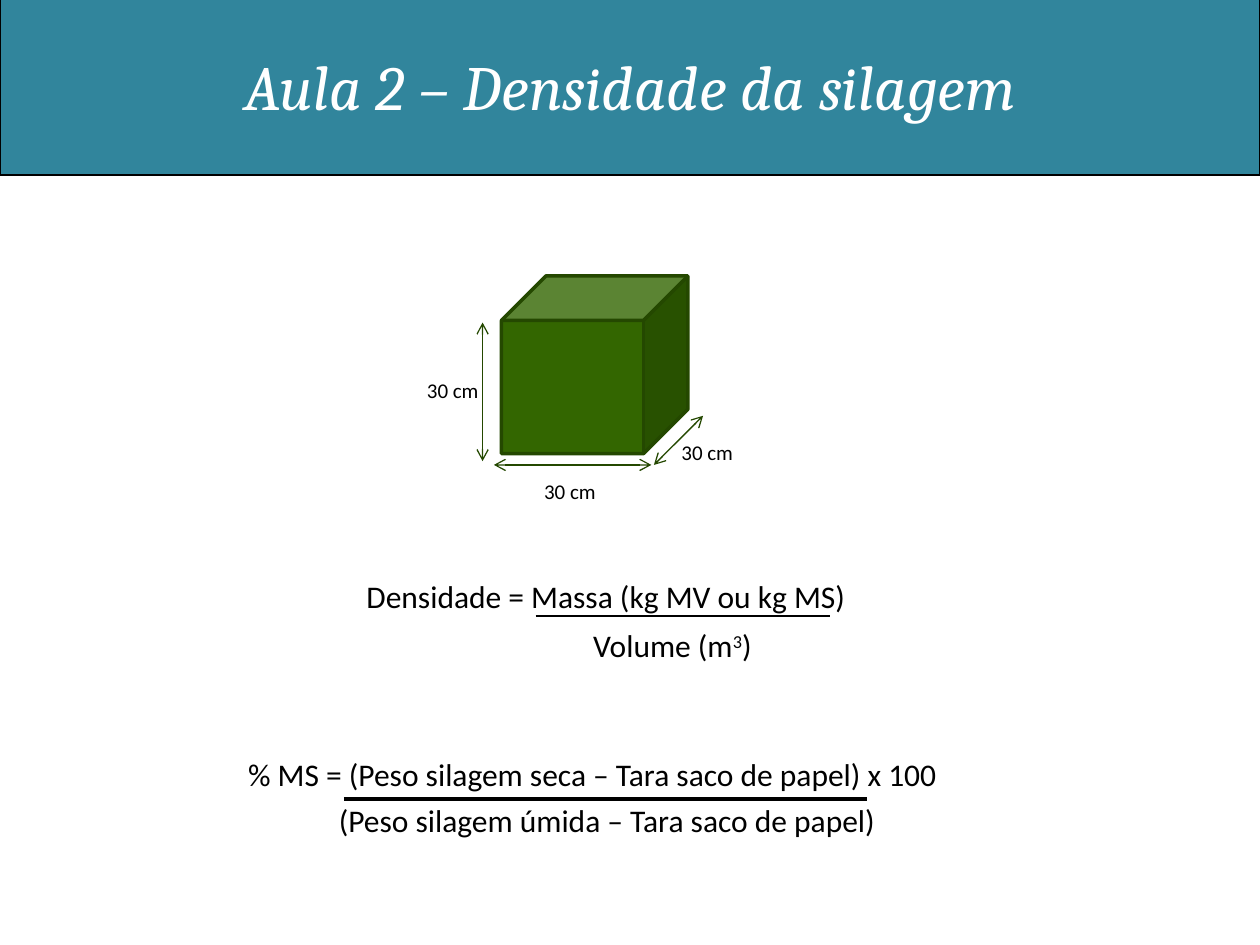
import pptx
import pptx.util
import pptx.dml.color
import pptx.enum.shapes
import pptx.enum.text
import pptx.oxml
import pptx.oxml.ns
import lxml.etree

TEAL = pptx.dml.color.RGBColor(0x31, 0x85, 0x9C)
GREEN = pptx.dml.color.RGBColor(0x33, 0x66, 0x00)
DARK_GREEN = pptx.dml.color.RGBColor(0x24, 0x48, 0x00)
BLACK = pptx.dml.color.RGBColor(0, 0, 0)
WHITE = pptx.dml.color.RGBColor(255, 255, 255)

presentation = pptx.Presentation()
presentation.slide_width = pptx.util.Inches(10)
presentation.slide_height = pptx.util.Inches(7.5)
COLUMN = presentation.slide_width / 100
ROW = presentation.slide_height / 75
slide = presentation.slides.add_slide(presentation.slide_layouts[6])


def write_text(shape, text, size=18, font="Calibri", color=BLACK, italic=None, superscript=None):
    run = shape.text_frame.paragraphs[0].add_run()
    run.text = text
    run.font.size = pptx.util.Pt(size)
    run.font.name = font
    run.font.color.rgb = color
    run.font.italic = italic
    if superscript:
        run.font._element.set("baseline", "30000")


def draw_line(shapes, start, end, color, width, arrows=False):
    line = shapes.add_connector(
        pptx.enum.shapes.MSO_CONNECTOR.STRAIGHT,
        int(start[0] * COLUMN), int(start[1] * ROW),
        int(end[0] * COLUMN), int(end[1] * ROW))
    line.line.color.rgb = color
    line.line.width = pptx.util.Pt(width)
    if arrows:
        outline = line.line._get_or_add_ln()
        for tag in ("a:headEnd", "a:tailEnd"):
            lxml.etree.SubElement(outline, pptx.oxml.ns.qn(tag), type="arrow")
    lxml.etree.SubElement(line._element.spPr, pptx.oxml.ns.qn("a:effectLst"))


solids = []
for preset, left, top, width, height, fill, outline, weight in [
    (pptx.enum.shapes.MSO_SHAPE.RECTANGLE, 0, -0.3, 100, 14.2, TEAL, BLACK, 0.75),
    (pptx.enum.shapes.MSO_SHAPE.CUBE, 39.8, 21.9, 14.8, 14.1, GREEN, DARK_GREEN, 2),
]:
    shape = slide.shapes.add_shape(
        preset, int(left * COLUMN), int(top * ROW), int(width * COLUMN), int(height * ROW))
    shape.shadow.inherit = False
    shape.fill.solid()
    shape.fill.fore_color.rgb = fill
    shape.line.color.rgb = outline
    shape.line.width = pptx.util.Pt(weight)
    solids.append(shape)

banner = solids[0]
banner.text_frame.word_wrap = False
banner.text_frame.vertical_anchor = pptx.enum.text.MSO_ANCHOR.MIDDLE
banner.text_frame.paragraphs[0].alignment = pptx.enum.text.PP_ALIGN.CENTER
write_text(banner, "Aula 2 – Densidade da silagem", size=36, font="Cambria", color=WHITE, italic=True)

for start, end in [
    ((39.2, 36.9), (51.7, 36.9)),
    ((55.8, 33), (51.9, 36.9)),
    ((38.3, 25.6), (38.3, 36.6)),
]:
    draw_line(slide.shapes, start, end, DARK_GREEN, 0.75, arrows=True)

density = slide.shapes.add_group_shape()
dry_matter = slide.shapes.add_group_shape()

for parent, left, top, width, height, size, pieces in [
    (slide, 42.2, 37.5, 6.3, 3, 12, ["30 cm"]),
    (slide, 53.1, 34.4, 6.3, 3, 12, ["30 cm"]),
    (slide, 32.9, 29.5, 6.3, 3, 12, ["30 cm"]),
    (density, 46.1, 49.2, 23.4, 4, 18, ["Volume (m", "3", ")"]),
    (density, 28.1, 45.3, 46.9, 4, 18, ["Densidade = Massa (kg MV ou kg MS)"]),
    (dry_matter, 25.9, 63.1, 46.1, 4, 18, ["(Peso silagem úmida – Tara saco de papel)"]),
    (dry_matter, 18.7, 59.4, 64.1, 4, 18, ["% MS = (Peso silagem seca – Tara saco de papel) x 100"]),
]:
    box = parent.shapes.add_textbox(
        int(left * COLUMN), int(top * ROW), int(width * COLUMN), int(height * ROW))
    box.text_frame.word_wrap = True
    box.text_frame.auto_size = pptx.enum.text.MSO_AUTO_SIZE.SHAPE_TO_FIT_TEXT
    for piece in pieces:
        write_text(box, piece, size=size, superscript=piece == "3")

draw_line(density.shapes, (42.5, 48.9), (65.9, 48.9), BLACK, 1.5)
draw_line(dry_matter.shapes, (27.3, 63.4), (68.8, 63.4), BLACK, 2)

presentation.save("out.pptx")
